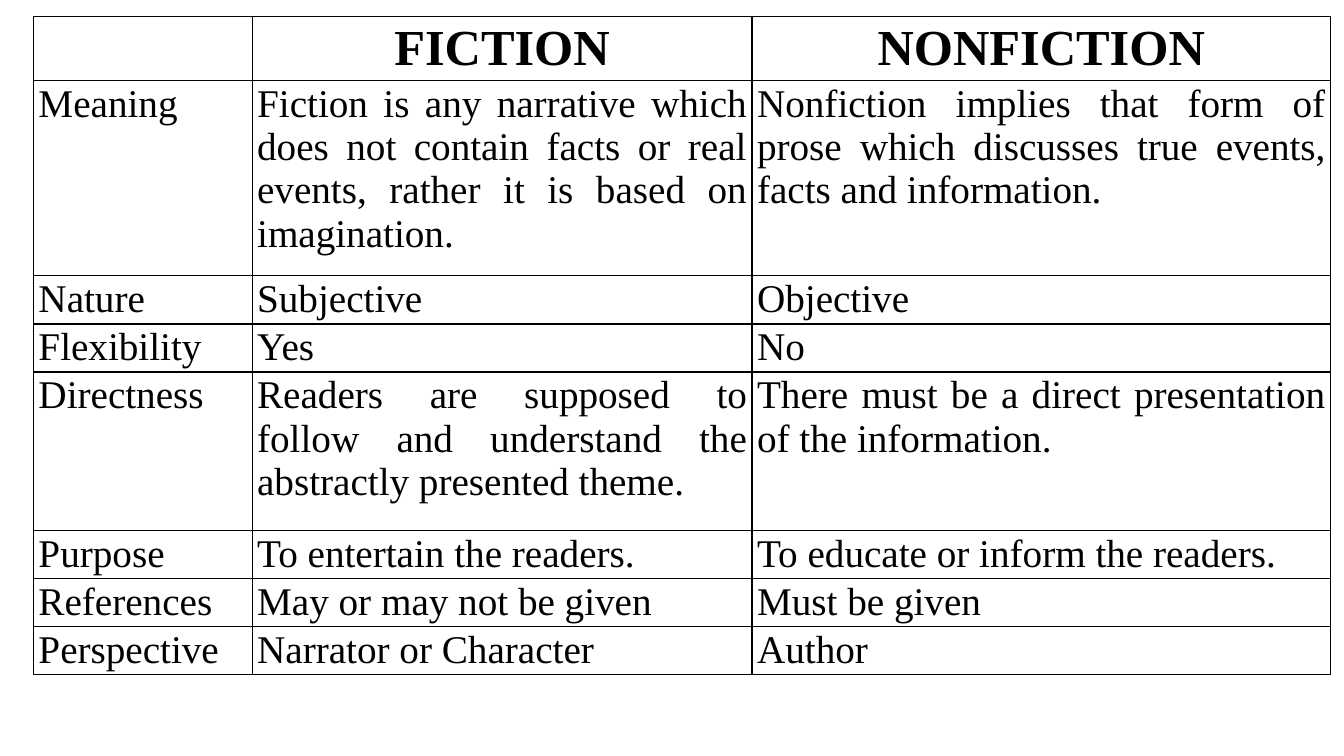
from dataclasses import dataclass

from lxml import etree
from pptx import Presentation
from pptx.dml.color import RGBColor
from pptx.enum.text import MSO_ANCHOR, PP_ALIGN
from pptx.oxml.ns import qn
from pptx.util import Pt

LEFT, CENTER, JUSTIFY = PP_ALIGN.LEFT, PP_ALIGN.CENTER, PP_ALIGN.JUSTIFY
TOP, MIDDLE = MSO_ANCHOR.TOP, MSO_ANCHOR.MIDDLE


@dataclass(frozen=True)
class Theme:
    font: str = "Times New Roman"
    ink: str = "000000"
    paper: str = "FFFFFF"
    heading_size: int = 36
    body_size: int = 28
    border_width: int = 1


theme = Theme()

ROW_LINE = 34.4  # height of a row with one line of text
COLUMN_WIDTHS = [156.2, 357.1, 413.3]

# Row height, then the text of each cell
ROWS = [
    (45.4, "", "FICTION", "NONFICTION"),
    (139.7, "Meaning",
     "Fiction is any narrative which does not contain facts or real events, "
     "rather it is based on imagination.",
     "Nonfiction implies that form of prose which discusses true events, "
     "facts and information."),
    (ROW_LINE, "Nature", "Subjective", "Objective"),
    (ROW_LINE, "Flexibility", "Yes", "No"),
    (113, "Directness",
     "Readers are supposed to follow and understand the abstractly presented theme.",
     "There must be a direct presentation of the information."),
    (ROW_LINE, "Purpose", "To entertain the readers.", "To educate or inform the readers."),
    (ROW_LINE, "References", "May or may not be given", "Must be given"),
    (ROW_LINE, "Perspective", "Narrator or Character", "Author"),
]


def add_borders(cell):
    properties = cell._tc.get_or_add_tcPr()
    for side in ("a:lnL", "a:lnR", "a:lnT", "a:lnB"):
        line = etree.SubElement(properties, qn(side), w=str(Pt(theme.border_width)))
        fill = etree.SubElement(line, qn("a:solidFill"))
        etree.SubElement(fill, qn("a:srgbClr"), val=theme.ink)


# Page
deck = Presentation()
deck.slide_width, deck.slide_height = Pt(960), Pt(540)
page = deck.slides.add_slide(deck.slide_layouts[6])
page.background.fill.solid()
page.background.fill.fore_color.rgb = RGBColor.from_string(theme.paper)

# Comparison table
total_height = sum(row[0] for row in ROWS)
frame = page.shapes.add_table(len(ROWS), len(COLUMN_WIDTHS), Pt(23.9), Pt(11.9),
                              Pt(sum(COLUMN_WIDTHS)), Pt(total_height))
table = frame.table
table.first_row = table.horz_banding = False
for column, width in zip(table.columns, COLUMN_WIDTHS):
    column.width = Pt(width)

# Cells
for row_index, (height, *texts) in enumerate(ROWS):
    table.rows[row_index].height = Pt(height)
    is_heading = row_index == 0
    for column_index, text in enumerate(texts):
        cell = table.cell(row_index, column_index)
        add_borders(cell)
        cell.fill.background()
        cell.margin_left = cell.margin_right = Pt(3.6)
        cell.margin_top = cell.margin_bottom = Pt(1.44)
        cell.vertical_anchor = MIDDLE if is_heading else TOP
        if not text:
            continue
        para = cell.text_frame.paragraphs[0]
        if is_heading:
            para.alignment = CENTER
        else:
            para.alignment = JUSTIFY if column_index else LEFT
        span = para.add_run()
        span.text = text
        span.font.name = theme.font
        span.font.size = Pt(theme.heading_size if is_heading else theme.body_size)
        span.font.bold = is_heading
        span.font.color.rgb = RGBColor.from_string(theme.ink)

deck.save("out.pptx")
